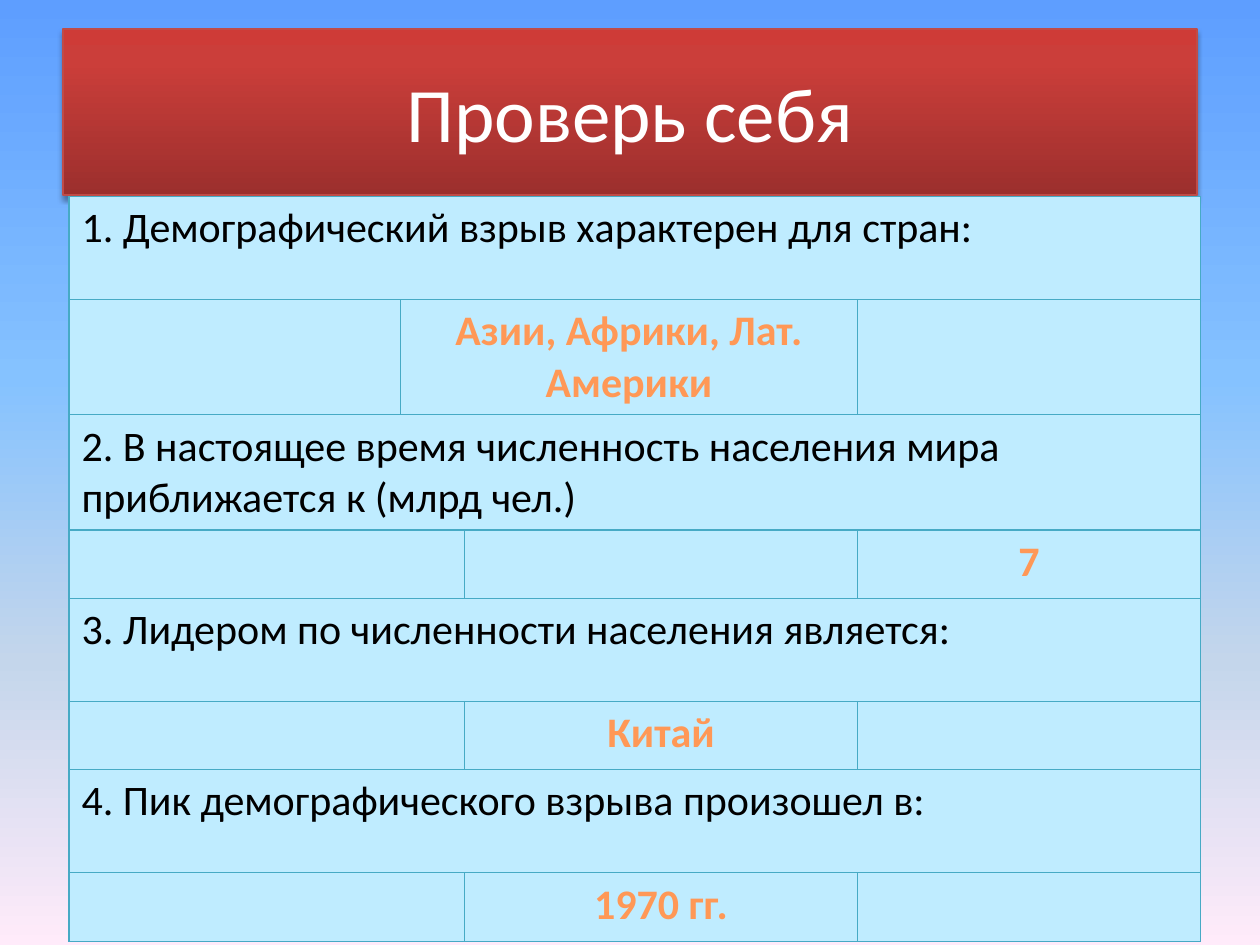
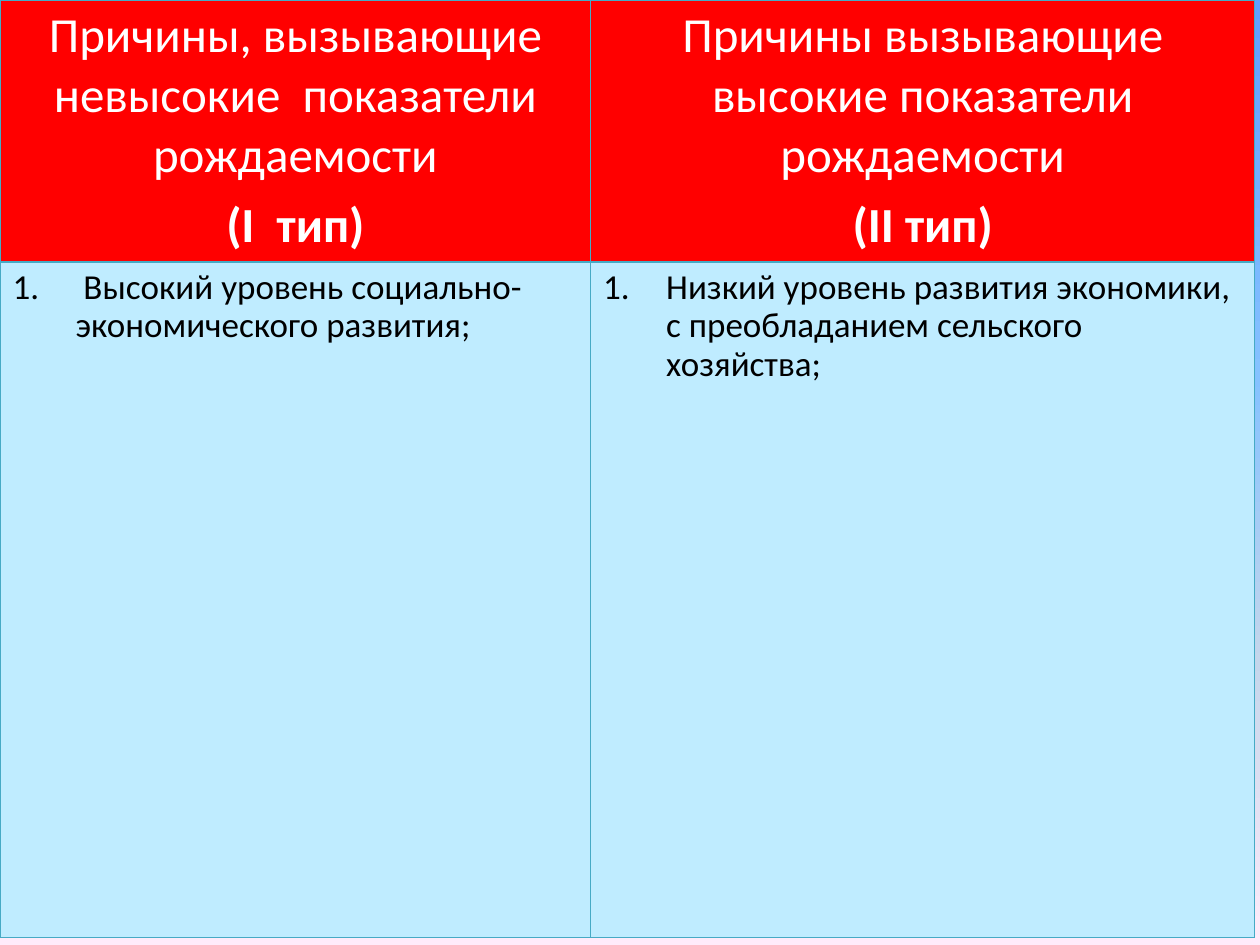
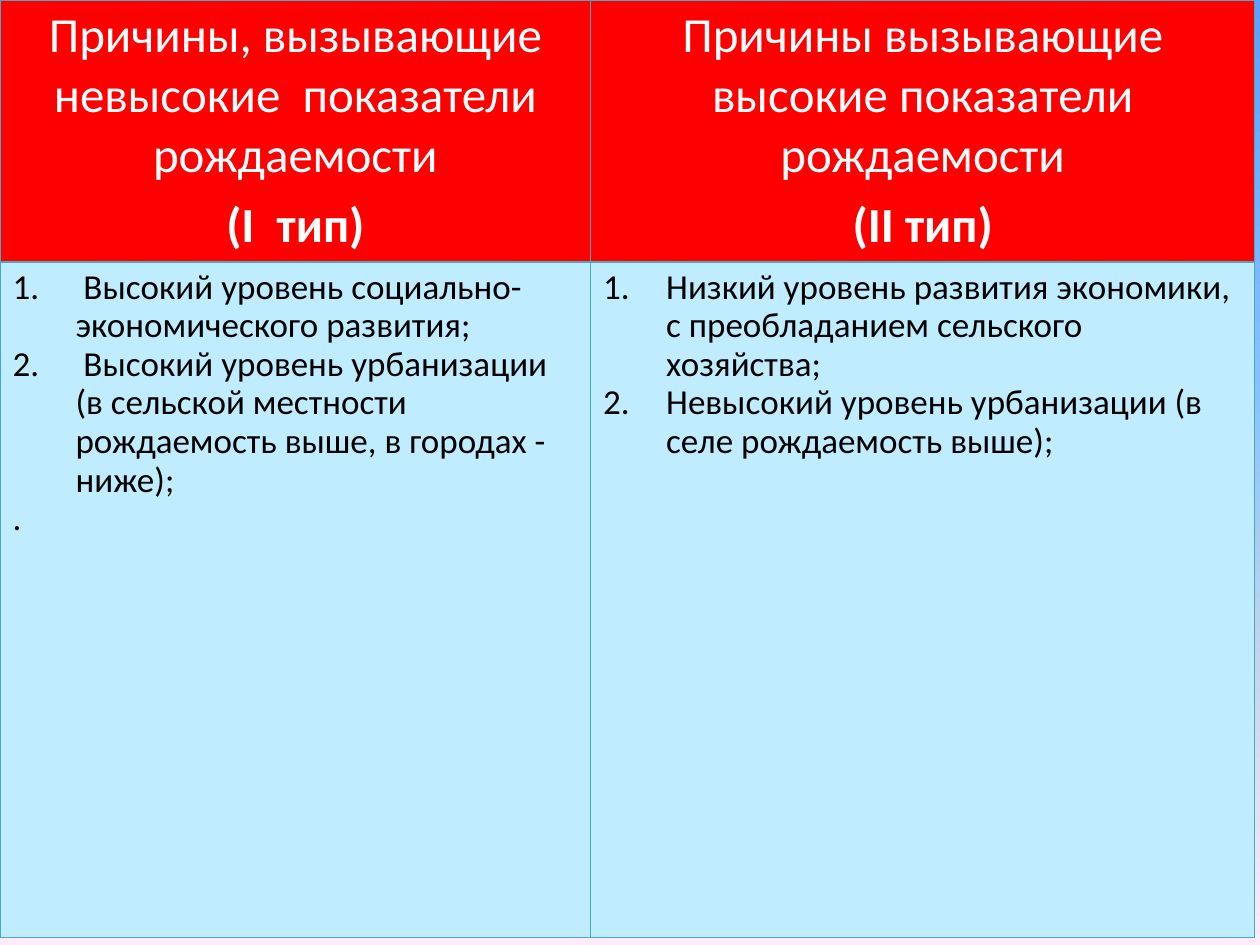
import pptx
import pptx.util
import pptx.dml.color
import pptx.enum.shapes
import pptx.enum.text
import pptx.oxml
import pptx.oxml.ns

Pt = pptx.util.Pt
qn = pptx.oxml.ns.qn
ALIGN = pptx.enum.text.PP_ALIGN

FONT = "Calibri"
WHITE, BLACK, RED = "FFFFFF", "000000", "FF0000"
CELL_BLUE, BORDER, TITLE_LINE = "BFECFF", "46AAC5", "BF4C48"
SKY = [(0, "5E9EFF"), (40, "85C2FF"), (70, "C4D6EB"), (100, "FFEBFA")]
TITLE_RED = [(0, "9C2F2D"), (80, "CB3E3A"), (100, "CE3B37")]
ANSWER_ORANGE = [(0, "9D4700"), (78, "FF9856"), (100, "FFF5F1")]

# Text formats
QUESTION = dict(size=24, color=BLACK, space_before=Pt(4.8))
ANSWER = dict(size=24, gradient=ANSWER_ORANGE, bold=True,
              alignment=ALIGN.CENTER, space_before=Pt(4.8))
HEADING = dict(size=28, color=WHITE, alignment=ALIGN.CENTER, space_before=Pt(5.6))
HEADING_TYPE = dict(HEADING, bold=True)
REASON = dict(size=20, color=BLACK, line_spacing=0.9, hanging=36)
NUMBERED = dict(REASON, numbered=True)

# Quiz rows: one (first column, span, text) entry per visible cell
QUIZ = [
    [(0, 4, "1. Демографический взрыв характерен для стран:")],
    [(0, 1, ""), (1, 2, "Азии, Африки, Лат. Америки"), (3, 1, "")],
    [(0, 4, "2. В настоящее время численность населения мира приближается к (млрд чел.)")],
    [(0, 2, ""), (2, 1, ""), (3, 1, "7")],
    [(0, 4, "3. Лидером по численности населения является:")],
    [(0, 2, ""), (2, 1, "Китай"), (3, 1, "")],
    [(0, 4, "4. Пик демографического взрыва произошел в:")],
    [(0, 2, ""), (2, 1, "1970 гг."), (3, 1, "")],
]

HEADINGS = [
    ("Причины, вызывающие невысокие  показатели рождаемости", "(I  тип)"),
    ("Причины вызывающие высокие показатели рождаемости", "(II тип)"),
]
LOW_BIRTH = [
    " Высокий уровень социально-экономического развития;",
    " Высокий уровень урбанизации (в сельской местности рождаемость выше, в городах - ниже);",
]
HIGH_BIRTH = [
    "Низкий уровень развития экономики, с преобладанием сельского хозяйства;",
    "Невысокий уровень урбанизации (в селе рождаемость выше);",
]


def rgb(value):
    return pptx.dml.color.RGBColor.from_string(value)


def xml(body):
    head, rest = body.split(" ", 1)
    return pptx.oxml.parse_xml(f"{head} {pptx.oxml.ns.nsdecls('a')} {rest}")


def set_gradient(fill, element, stops, angle):
    """Fill with any number of stops; the angle runs counter-clockwise."""
    fill.gradient()
    fill.gradient_angle = angle
    gs_list = element.find(".//" + qn("a:gsLst"))
    for gs in list(gs_list):
        gs_list.remove(gs)
    for pos, color in stops:
        gs_list.append(xml(f'<a:gs pos="{pos * 1000}"><a:srgbClr val="{color}"/></a:gs>'))


def write(tf, paragraphs):
    """Write (text, format) pairs as the paragraphs of a text frame."""
    for i, (text, fmt) in enumerate(paragraphs):
        p = tf.add_paragraph() if i else tf.paragraphs[0]
        for name in ("alignment", "space_before", "line_spacing"):
            if name in fmt:
                setattr(p, name, fmt[name])
        if "hanging" in fmt:
            pPr = p._p.get_or_add_pPr()
            pPr.set("marL", str(Pt(fmt["hanging"])))
            pPr.set("indent", str(-Pt(fmt["hanging"])))
            if fmt.get("numbered"):
                pPr.append(xml('<a:buAutoNum type="arabicPeriod"/>'))
        r = p.add_run()
        r.text = text
        font = dict(name=FONT, size=Pt(fmt["size"]), bold=fmt.get("bold", False))
        for name, value in font.items():
            setattr(r.font, name, value)
        if "gradient" in fmt:
            set_gradient(r.font.fill, r._r, fmt["gradient"], 270)
        else:
            r.font.color.rgb = rgb(fmt["color"])


def add_grid(slide, box, cols, rows):
    """Table with thin borders and light blue cells."""
    table = slide.shapes.add_table(len(rows), len(cols), *map(Pt, box)).table
    table.first_row = table.horz_banding = False
    for col, width in zip(table.columns, cols):
        col.width = Pt(width)
    for row, height in zip(table.rows, rows):
        row.height = Pt(height)
    for cell in table.iter_cells():
        tcPr = cell._tc.get_or_add_tcPr()
        for side in "LRTB":
            tcPr.append(xml(f'<a:ln{side} w="{Pt(0.75)}"><a:solidFill>'
                            f'<a:srgbClr val="{BORDER}"/></a:solidFill></a:ln{side}>'))
        fill_cell(cell, CELL_BLUE)
    return table


def fill_cell(cell, color):
    cell.fill.solid()
    cell.fill.fore_color.rgb = rgb(color)


def title_band(slide, box, text):
    sp = slide.shapes.add_shape(pptx.enum.shapes.MSO_SHAPE.RECTANGLE, *map(Pt, box))
    spPr = sp._element.spPr
    set_gradient(sp.fill, spPr, TITLE_RED, 90)
    sp.line.color.rgb = rgb(TITLE_LINE)
    sp.line.width = Pt(0.75)
    # Soft shadow below the band
    sp.shadow.inherit = False
    spPr.find(qn("a:effectLst")).append(xml(
        f'<a:outerShdw blurRad="{Pt(3.1)}" dist="{Pt(1.8)}" dir="5400000" rotWithShape="0">'
        f'<a:srgbClr val="{BLACK}"><a:alpha val="35000"/></a:srgbClr></a:outerShdw>'))
    tf = sp.text_frame
    tf.word_wrap = True
    tf.vertical_anchor = pptx.enum.text.MSO_ANCHOR.MIDDLE
    write(tf, [(text, dict(size=44, color=WHITE, alignment=ALIGN.CENTER))])


def quiz_table(slide, box):
    # Questions and wrapped answers are tall, short answers low
    rows = [59, 59, 59, 39, 59, 39, 59, 39]
    table = add_grid(slide, box, [189.4, 36.7, 224.6, 195.8], rows)
    for i, entries in enumerate(QUIZ):
        for col, span, text in entries:
            cell = table.cell(i, col)
            if span > 1:
                cell.merge(table.cell(i, col + span - 1))
            if text:
                write(cell.text_frame, [(text, ANSWER if i % 2 else QUESTION)])


def reasons_table(slide, box, columns):
    header = 149.5
    table = add_grid(slide, box, [337.5, box[2] - 337.5], [header, box[3] - header])
    for i, ((heading, kind), reasons) in enumerate(zip(HEADINGS, columns)):
        head, body = table.cell(0, i), table.cell(1, i)
        fill_cell(head, RED)
        write(head.text_frame, [(heading, HEADING), (kind, HEADING_TYPE)])
        write(body.text_frame, reasons)


def numbered(reasons):
    return [(text, NUMBERED) for text in reasons]


def main():
    prs = pptx.Presentation()
    prs.slide_width, prs.slide_height = Pt(720), Pt(540)
    master = prs.slide_master
    set_gradient(master.background.fill, master.element, SKY, 270)
    quiz, first, second = [prs.slides.add_slide(prs.slide_layouts[6]) for _ in range(3)]

    # Quiz answers
    title_band(quiz, (36, 16.5, 648, 95), "Проверь себя")
    quiz_table(quiz, (39.4, 112.3, 646.5, 412))

    # Reasons, revealed one after another
    page = (0, 0, 717, 535.5)
    reasons_table(first, page, [numbered(LOW_BIRTH[:1]), numbered(HIGH_BIRTH[:1])])
    reasons_table(second, page, [numbered(LOW_BIRTH) + [(".", REASON)], numbered(HIGH_BIRTH)])

    prs.save("out.pptx")


if __name__ == "__main__":
    main()
